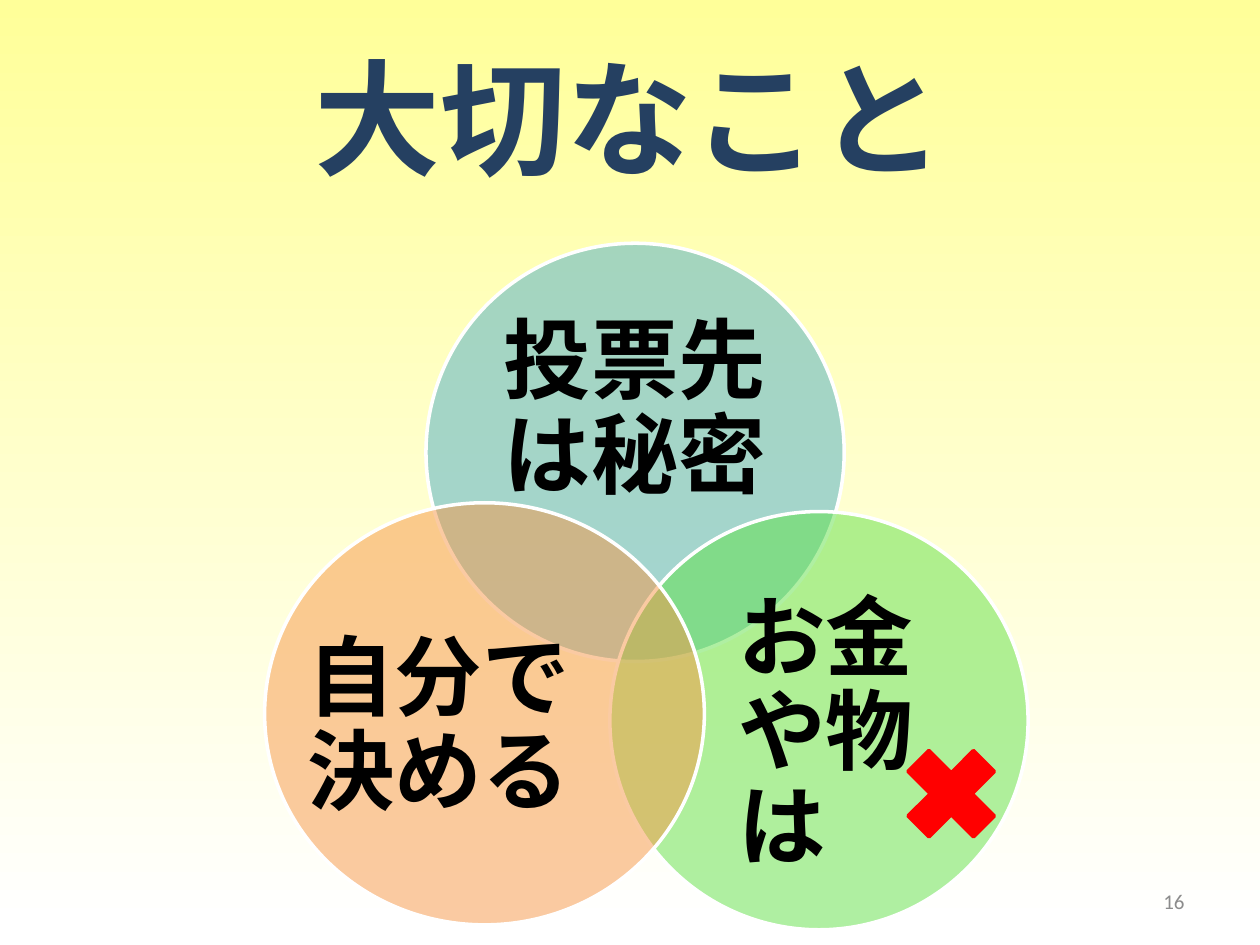
import pptx
import pptx.util
import pptx.dml.color
import pptx.enum.shapes
import pptx.enum.text
import pptx.oxml.ns
from dataclasses import dataclass
from lxml import etree

Pt = pptx.util.Pt
RGB = pptx.dml.color.RGBColor.from_string
Shapes = pptx.enum.shapes.MSO_SHAPE
Align = pptx.enum.text.PP_ALIGN
Anchor = pptx.enum.text.MSO_ANCHOR
qn = pptx.oxml.ns.qn


@dataclass(frozen=True)
class Theme:
    japanese_font: str = "Noto Sans CJK JP"
    latin_font: str = "Calibri"
    background_top: str = "FFFF99"
    background_bottom: str = "FFFFFF"
    title: str = "254061"
    label: str = "000000"
    number: str = "8C8C8C"
    outline: str = "FFFFFF"
    secret: str = "4BACC6"
    money: str = "60E146"
    decide: str = "F79646"
    cross: str = "FF0000"
    title_size: int = 72
    label_size: int = 50
    number_size: int = 12
    line_width: int = 2
    opacity: int = 50


THEME = Theme()


def set_attributes(target, values):
    for name, value in values.items():
        setattr(target, name, value)


def add_text(shapes, box, text, size, color, font, bold=False,
             align=Align.CENTER, margin=0, spacing=1.0):
    text_box = shapes.add_textbox(*map(Pt, box))
    frame = text_box.text_frame
    set_attributes(frame, {
        "word_wrap": True, "vertical_anchor": Anchor.MIDDLE,
        "margin_left": Pt(margin), "margin_right": Pt(margin),
        "margin_top": Pt(margin / 2), "margin_bottom": Pt(margin / 2),
    })
    paragraph = frame.paragraphs[0]
    set_attributes(paragraph, {"alignment": align, "line_spacing": spacing})
    run = paragraph.add_run()
    run.text = text
    set_attributes(run.font, {"name": font, "size": Pt(size), "bold": bold})
    run.font.color.rgb = RGB(color)
    latin = run.font._element.find(qn("a:latin"))
    east_asian = etree.Element(qn("a:ea"), typeface=font)
    latin.addnext(east_asian)


def add_filled_shape(shapes, kind, box, fill, line, opacity=100):
    shape = shapes.add_shape(kind, *map(Pt, box))
    shape.shadow.inherit = False
    shape.fill.solid()
    shape.fill.fore_color.rgb = RGB(fill)
    shape.line.color.rgb = RGB(line)
    shape.line.width = Pt(THEME.line_width)
    if opacity < 100:
        color = shape._element.spPr.find(qn("a:solidFill"))[0]
        etree.SubElement(color, qn("a:alpha"), val=str(opacity * 1000))


def paint_background(slide):
    fill = slide.background.fill
    fill.gradient()
    fill.gradient_angle = 270
    stops = ((0, THEME.background_top), (0.98, THEME.background_bottom))
    for stop, (position, color) in zip(fill.gradient_stops, stops):
        stop.position = position
        stop.color.rgb = RGB(color)


def add_title(slide, box):
    add_text(slide.shapes, box, "大切なこと", THEME.title_size, THEME.title,
             THEME.japanese_font, bold=True, margin=7.2)


def add_page_number(slide, box):
    add_text(slide.shapes, box, "16", THEME.number_size, THEME.number,
             THEME.latin_font, align=Align.RIGHT, margin=7.2)


def add_venn(slide, box):
    left, top, width, height = box
    diameter = 239
    circles = (
        ("投票先は秘密", THEME.secret, Align.CENTER,
         (92.2, 0, diameter, diameter), (123.8, 42.5, 175.7, 107.3)),
        ("お金や物は", THEME.money, Align.LEFT,
         (width - diameter, height - diameter, diameter, diameter),
         (270.7, 215.3, 143.3, 131.8)),
        ("自分で決める", THEME.decide, Align.CENTER,
         (0, 148.3, 251.3, 241.2), (23.8, 211, 151.2, 132.5)),
    )
    group = slide.shapes.add_group_shape()
    for text, color, align, circle, label in circles:
        circle_box, label_box = (
            (left + x, top + y, w, h) for x, y, w, h in (circle, label))
        add_filled_shape(group.shapes, Shapes.OVAL, circle_box, color,
                         THEME.outline, THEME.opacity)
        add_text(group.shapes, label_box, text, THEME.label_size, THEME.label,
                 THEME.japanese_font, bold=True, align=align, spacing=0.9)


def add_cross(slide, box):
    add_filled_shape(slide.shapes, Shapes.MATH_MULTIPLY, box,
                     THEME.cross, THEME.cross)


def main():
    presentation = pptx.Presentation()
    set_attributes(presentation,
                   {"slide_width": Pt(720), "slide_height": Pt(540)})
    slide = presentation.slides.add_slide(presentation.slide_layouts[6])
    paint_background(slide)
    add_page_number(slide, (516.2, 500.4, 167.8, 28.8))
    add_title(slide, (36, 21.6, 648, 90))
    add_venn(slide, (151.2, 139, 436.3, 392.3))
    add_cross(slide, (507.6, 417.6, 72, 72))
    presentation.save("out.pptx")


if __name__ == "__main__":
    main()
